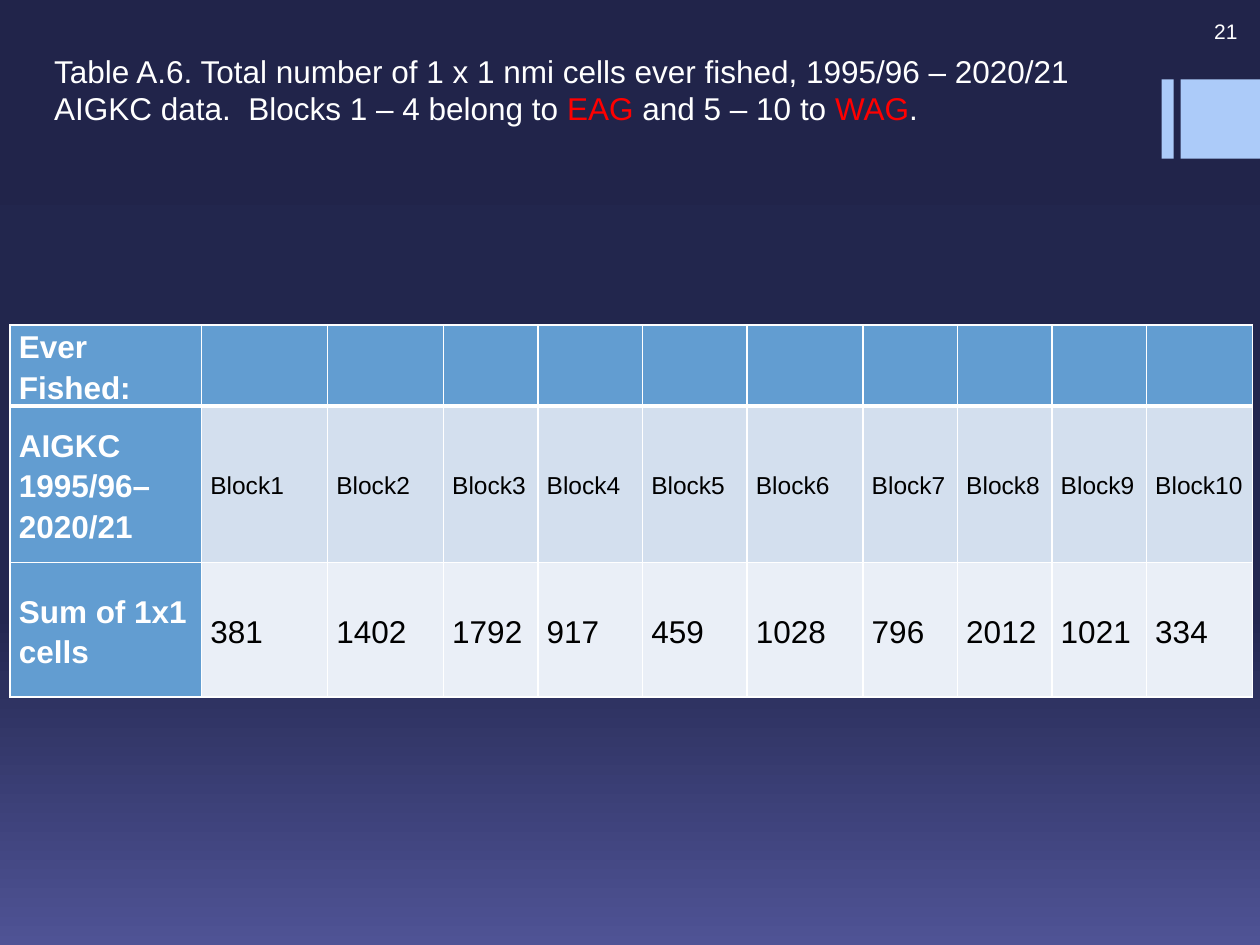
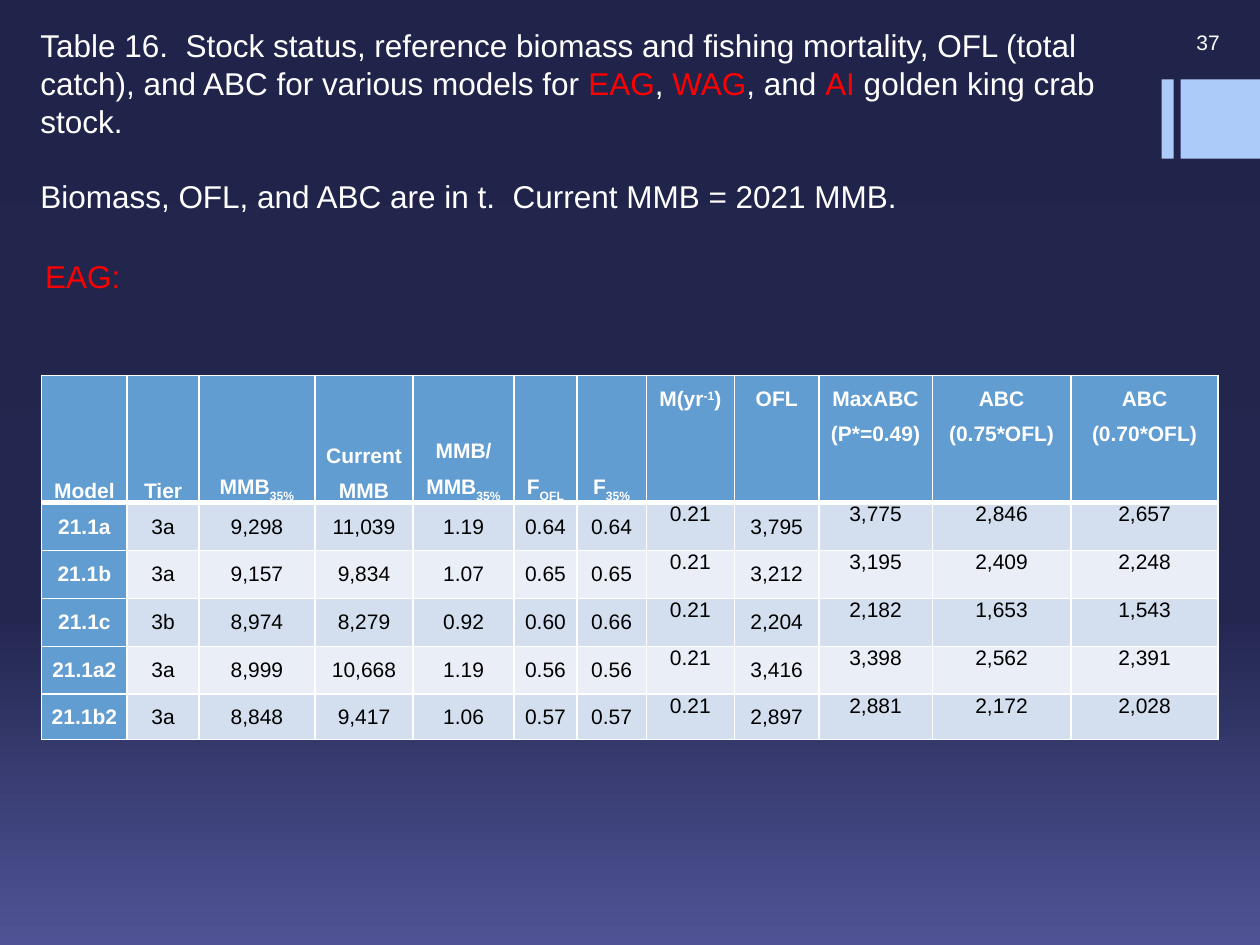
from dataclasses import dataclass
from typing import NamedTuple

import pptx
import pptx.dml.color
import pptx.enum.shapes
import pptx.enum.text
import pptx.oxml
import pptx.oxml.ns
import pptx.util

# Grid of 100 columns by 75 rows
WIDE, HIGH = pptx.util.Inches(10), pptx.util.Inches(7.5)
COL, ROW = WIDE / 100, HIGH / 75

FONT = "Arial"
WHITE, BLACK, RED = "FFFFFF", "000000", "FF0000"
BLUE, PALE = "629DD1", "ACCBF9"
BANDS = ("D3DFEE", "EAEFF7")
SKY = ((0, "21244A"), (65, "232750"), (100, "4F5395"))

ALIGN = pptx.enum.text.PP_ALIGN
ANCHOR = pptx.enum.text.MSO_ANCHOR
TOP, MID, LOW = ANCHOR.TOP, ANCHOR.MIDDLE, ANCHOR.BOTTOM


class Box(NamedTuple):
    """A place on the grid, in columns and rows."""
    left: float
    top: float
    width: float
    height: float

    def place(self) -> tuple[int, int, int, int]:
        return (round(self.left * COL), round(self.top * ROW),
                round(self.width * COL), round(self.height * ROW))


class Run(NamedTuple):
    text: str
    color: str | None = None
    base: int = 0


Line = list[Run]


@dataclass
class Style:
    size: float = 18
    color: str = WHITE
    bold: bool = False
    align: ALIGN = ALIGN.LEFT
    space: float = 1
    before: float = 0


@dataclass
class Table:
    box: Box
    cols: list[float]
    rows: list[float]
    cells: list[list[list[Line]]]
    sizes: list[float]
    align: ALIGN
    spaces: list[float]
    heads: list[ANCHOR]
    rest: list[ANCHOR]


@dataclass
class Page:
    number: str
    mark: Box
    title: Box
    lines: list[Line]
    table: Table
    label: Box | None = None


def rgb(code: str) -> pptx.dml.color.RGBColor:
    return pptx.dml.color.RGBColor.from_string(code)


def plain(text: str) -> list[Line]:
    return [[Run(part)] for part in text.split("\n")] if text else []


def sub(text: str, low: str) -> Line:
    return [Run(text), Run(low, base=-25)]


def write(frame, lines: list[Line], style: Style) -> None:
    for i, line in enumerate(lines):
        para = frame.add_paragraph() if i else frame.paragraphs[0]
        para.alignment = style.align
        para.line_spacing = style.space
        para.space_before = pptx.util.Pt(style.before if i else 0)
        for part in line:
            run = para.add_run()
            run.text = part.text
            font = run.font
            font.name, font.size = FONT, pptx.util.Pt(style.size)
            font.bold = style.bold
            font.color.rgb = rgb(part.color or style.color)
            if part.base:
                run._r.get_or_add_rPr().set("baseline", str(part.base * 1000))


def setup(frame, anchor: ANCHOR) -> None:
    frame.word_wrap = True
    frame.auto_size = pptx.enum.text.MSO_AUTO_SIZE.NONE
    frame.vertical_anchor = anchor


def add_text(slide, box: Box, lines: list[Line], style: Style,
             anchor: ANCHOR = TOP) -> None:
    frame = slide.shapes.add_textbox(*box.place()).text_frame
    setup(frame, anchor)
    write(frame, lines, style)


def add_title(slide, box: Box, lines: list[Line]) -> None:
    title = slide.shapes.title
    title.left, title.top, title.width, title.height = box.place()
    setup(title.text_frame, TOP)
    write(title.text_frame, lines, Style(before=21))


def add_bands(slide) -> None:
    for box in (Box(92.2, 6.3, 0.95, 6.3), Box(93.7, 6.3, 6.3, 6.3)):
        band = slide.shapes.add_shape(
            pptx.enum.shapes.MSO_SHAPE.RECTANGLE, *box.place())
        band.shadow.inherit = False
        band.fill.solid()
        band.fill.fore_color.rgb = rgb(PALE)
        band.line.fill.background()


def add_edges(cell, top: float, bottom: float) -> None:
    """Draw the four white borders of a cell, widths in points."""
    props = cell._tc.get_or_add_tcPr()
    for side, width in (("L", 1), ("R", 1), ("T", top), ("B", bottom)):
        props.append(pptx.oxml.parse_xml(
            f'<a:ln{side} {pptx.oxml.ns.nsdecls("a")} w="{pptx.util.Pt(width)}">'
            f'<a:solidFill><a:srgbClr val="{WHITE}"/></a:solidFill></a:ln{side}>'))


def add_table(slide, spec: Table) -> None:
    grid = slide.shapes.add_table(
        len(spec.rows), len(spec.cols), *spec.box.place()).table
    grid.first_row = grid.horz_banding = False
    for col, width in zip(grid.columns, spec.cols):
        col.width = round(width * COL)
    for row, height in zip(grid.rows, spec.rows):
        row.height = round(height * ROW)
    for r, line in enumerate(spec.cells):
        for c, text in enumerate(line):
            cell = grid.cell(r, c)
            head = r == 0 or c == 0
            add_edges(cell, 3 if r == 1 else 1, 3 if r == 0 else 1)
            cell.fill.solid()
            cell.fill.fore_color.rgb = rgb(BLUE if head else BANDS[(r - 1) % 2])
            cell.margin_left = cell.margin_right = round(0.7 * COL)
            cell.margin_top = cell.margin_bottom = 0
            cell.vertical_anchor = (spec.rest if r else spec.heads)[c]
            write(cell.text_frame, text, Style(
                spec.sizes[0] if head else spec.sizes[r],
                WHITE if head else BLACK, head, spec.align, spec.spaces[r]))


def paint(master) -> None:
    """Give the master the shared background gradient."""
    fill = master.background.fill
    fill.gradient()
    fill.gradient_angle = 270
    stops = master.element.xpath(".//p:bgPr//a:gsLst")[0]
    for old in list(stops):
        stops.remove(old)
    for at, code in SKY:
        stops.append(pptx.oxml.parse_xml(
            f'<a:gs {pptx.oxml.ns.nsdecls("a")} pos="{at * 1000}">'
            f'<a:srgbClr val="{code}"/></a:gs>'))


BLOCKS = [381, 1402, 1792, 917, 459, 1028, 796, 2012, 1021, 334]
CELLS = Table(
    Box(0.8, 25.8, 98.6, 29.7),
    [15.2, 10, 9.2, 7.5, 8.3, 8.3, 9.2, 7.5, 7.5, 7.5, 8.4],
    [5.9, 12.4, 10.7],
    [[plain(text) for text in row] for row in (
        ["Ever Fished:"] + [""] * len(BLOCKS),
        ["AIGKC 1995/96–2020/21"] + [f"Block{i + 1}" for i in range(len(BLOCKS))],
        ["Sum of 1x1 cells"] + [str(total) for total in BLOCKS])],
    [18, 14, 18], ALIGN.LEFT, [1.15] * 3, [MID] * 11, [MID] * 11)

HEADS = [
    plain("Model"), plain("Tier"), [sub("MMB", "35%")], plain("Current MMB"),
    [[Run("MMB/")], sub("MMB", "35%")], [sub("F", "OFL")], [sub("F", "35%")],
    [[Run("M(yr"), Run("-1", base=30), Run(")")]], plain("OFL"),
    plain("MaxABC\n(P*=0.49)"), plain("ABC\n(0.75*OFL)"),
    plain("ABC\n(0.70*OFL)")]
MODELS = (
    "21.1a 3a 9,298 11,039 1.19 0.64 0.64 0.21 3,795 3,775 2,846 2,657",
    "21.1b 3a 9,157 9,834 1.07 0.65 0.65 0.21 3,212 3,195 2,409 2,248",
    "21.1c 3b 8,974 8,279 0.92 0.60 0.66 0.21 2,204 2,182 1,653 1,543",
    "21.1a2 3a 8,999 10,668 1.19 0.56 0.56 0.21 3,416 3,398 2,562 2,391",
    "21.1b2 3a 8,848 9,417 1.06 0.57 0.57 0.21 2,897 2,881 2,172 2,028")
STOCK = Table(
    Box(3.3, 29.8, 93.3, 28.9),
    [6.8, 5.7, 9.2, 7.8, 8, 5, 5.5, 7, 6.7, 9, 11, 11.7],
    [10.1] + [3.8] * 4 + [3.6],
    [HEADS] + [[plain(text) for text in row.split()] for row in MODELS],
    [12] * 6, ALIGN.CENTER, [1.5] + [1] * 5,
    [LOW] * 7 + [TOP] * 5, [MID] * 7 + [TOP, MID] + [TOP] * 3)

PAGES = [
    Page("21", Box(88.9, 0.8, 10.3, 3.3), Box(3.3, 3.6, 87.5, 10.1),
         [[Run("Table A.6. Total number of 1 x 1 nmi cells ever fished, "
               "1995/96 – 2020/21 AIGKC data.  Blocks 1 – 4 belong to "),
           Run("EAG", RED), Run(" and 5 – 10 to "), Run("WAG", RED), Run(".")]],
         CELLS),
    Page("37", Box(87.5, 1.7, 10.3, 3.3), Box(2.2, 1.6, 91.1, 22.2),
         [[Run("Table 16.  Stock status, reference biomass and fishing mortality, "
               "OFL (total catch), and ABC for various models for "),
           Run("EAG", RED), Run(", "), Run("WAG", RED), Run(", and "),
           Run("AI", RED), Run(" golden king crab stock.")],
          [Run("Biomass, OFL, and ABC are in t.  Current MMB = 2021 MMB.")]],
         STOCK, Box(2.6, 19.9, 10.3, 4)),
]


def main() -> None:
    deck = pptx.Presentation()
    deck.slide_width, deck.slide_height = WIDE, HIGH
    paint(deck.slide_master)
    layout = deck.slide_layouts.get_by_name("Title Only")
    for page in PAGES:
        slide = deck.slides.add_slide(layout)
        add_bands(slide)
        add_text(slide, page.mark, plain(page.number),
                 Style(12, align=ALIGN.RIGHT), MID)
        add_title(slide, page.title, page.lines)
        if page.label:
            add_text(slide, page.label, plain("EAG:"), Style(color=RED))
        add_table(slide, page.table)
    deck.save("out.pptx")


if __name__ == "__main__":
    main()
